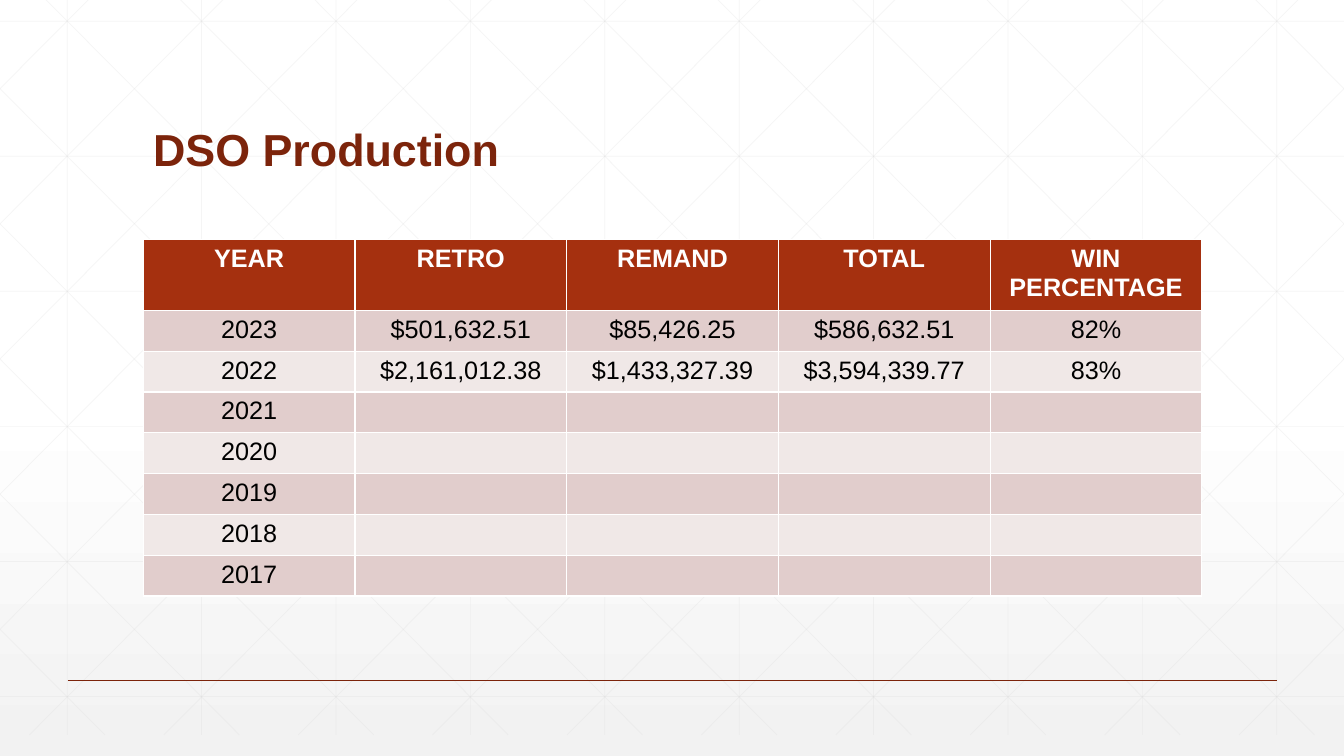
from lxml import etree
from pptx import Presentation
from pptx.dml.color import RGBColor
from pptx.enum import shapes, text
from pptx.oxml import ns
from pptx.util import Inches, Pt

WHITE = RGBColor(0xFF, 0xFF, 0xFF)
BLACK = RGBColor(0, 0, 0)
MIST = RGBColor(0xF2, 0xF2, 0xF2)
GRID_GREY = RGBColor(0xD9, 0xD9, 0xD9)
MAROON = RGBColor(0x7C, 0x24, 0x0B)
RUST = RGBColor(0xA5, 0x30, 0x0F)
BANDS = (RGBColor(0xE1, 0xCD, 0xCC), RGBColor(0xF0, 0xE8, 0xE7))

FONT = "Arial"
WIDTH, HEIGHT = 13.33, 7.5

PRODUCTION = [
    ("YEAR", "RETRO", "REMAND", "TOTAL", "WIN PERCENTAGE"),
    ("2023", "$501,632.51", "$85,426.25", "$586,632.51", "82%"),
    ("2022", "$2,161,012.38", "$1,433,327.39", "$3,594,339.77", "83%"),
    ("2021",), ("2020",), ("2019",), ("2018",), ("2017",),
]


def paint_background(slide):
    """Fade from white to light grey over the lower half."""
    fill = slide.background.fill
    fill.gradient()
    fill.gradient_angle = 270
    stops = slide.background._cSld.find(".//" + ns.qn("a:gsLst"))
    for stop in list(stops):
        stops.remove(stop)
    for position, color in ((0, WHITE), (53, WHITE), (100, MIST)):
        stop = etree.SubElement(stops, ns.qn("a:gs"), pos=str(position * 1000))
        etree.SubElement(stop, ns.qn("a:srgbClr"), val=str(color))


def add_line(parent, start, end, color, weight, opacity=100):
    line = parent.add_connector(
        shapes.MSO_CONNECTOR.STRAIGHT, *(Inches(v) for v in (*start, *end)))
    line.line.color.rgb = color
    line.line.width = Pt(weight)
    if opacity < 100:
        solid = line._element.spPr.find(".//" + ns.qn("a:srgbClr"))
        etree.SubElement(solid, ns.qn("a:alpha"), val=str(opacity * 1000))
    etree.SubElement(line._element.spPr, ns.qn("a:effectLst"))


def add_lattice(slide, left, top, width, height):
    """Draw squares with crossing diagonals, clipped at the left and right."""
    lattice = slide.shapes.add_group_shape().shapes
    right, bottom = left + width, top + height
    pitch = width / 10
    slope = 1.006

    def thread(start, end):
        add_line(lattice, start, end, GRID_GREY, 0.5, 25)

    for column in range(10):
        x = left + pitch * (column + 0.5)
        thread((x, top), (x, bottom))
    for row in range(6):
        y = top + 0.42 + 1.34 * row
        thread((left, y), (right, y))
    for step in range(-5, 10):
        apex = left + 0.25 + pitch * step
        x1 = max(apex, left)
        x2 = min(apex + height / slope, right)
        y1, y2 = (top + (x - apex) * slope for x in (x1, x2))
        thread((x1, y1), (x2, y2))
        thread((left + right - x1, y1), (left + right - x2, y2))


def add_title(slide, left, top, width, height):
    box = slide.shapes.add_textbox(*map(Inches, (left, top, width, height)))
    frame = box.text_frame
    frame.word_wrap = True
    frame.vertical_anchor = text.MSO_ANCHOR.BOTTOM
    title = frame.paragraphs[0]
    title.text = "DSO Production"
    title.line_spacing = 0.9
    title.font.name = FONT
    title.font.size = Pt(32)
    title.font.bold = True
    title.font.color.rgb = MAROON


def add_production_table(slide, left, top, width, header_height, row_height):
    columns = len(PRODUCTION[0])
    height = header_height + row_height * (len(PRODUCTION) - 1)
    table = slide.shapes.add_table(
        len(PRODUCTION), columns,
        *map(Inches, (left, top, width, height))).table
    for column in table.columns:
        column.width = Inches(width / columns)
    for r, values in enumerate(PRODUCTION):
        header = r == 0
        table.rows[r].height = Inches(header_height if header else row_height)
        for c in range(columns):
            cell = table.cell(r, c)
            cell.fill.solid()
            cell.fill.fore_color.rgb = RUST if header else BANDS[(r - 1) % 2]
            entry = cell.text_frame.paragraphs[0]
            if c < len(values):
                entry.text = values[c]
            entry.alignment = text.PP_ALIGN.CENTER
            entry.font.name = FONT
            entry.font.size = Pt(18)
            entry.font.bold = header
            entry.font.color.rgb = WHITE if header else BLACK


def main():
    deck = Presentation()
    deck.slide_width, deck.slide_height = Inches(WIDTH), Inches(HEIGHT)
    slide = deck.slides.add_slide(deck.slide_layouts[6])
    paint_background(slide)
    add_lattice(slide, 0, -0.21, WIDTH, 7.5)
    add_line(slide.shapes, (0.67, 6.75), (12.67, 6.75), MAROON, 1)
    add_title(slide, 1.42, 0.55, 10.5, 1.25)
    add_production_table(slide, 1.42, 2.38, 10.5, 0.66, 0.405)
    deck.save("out.pptx")


if __name__ == "__main__":
    main()
